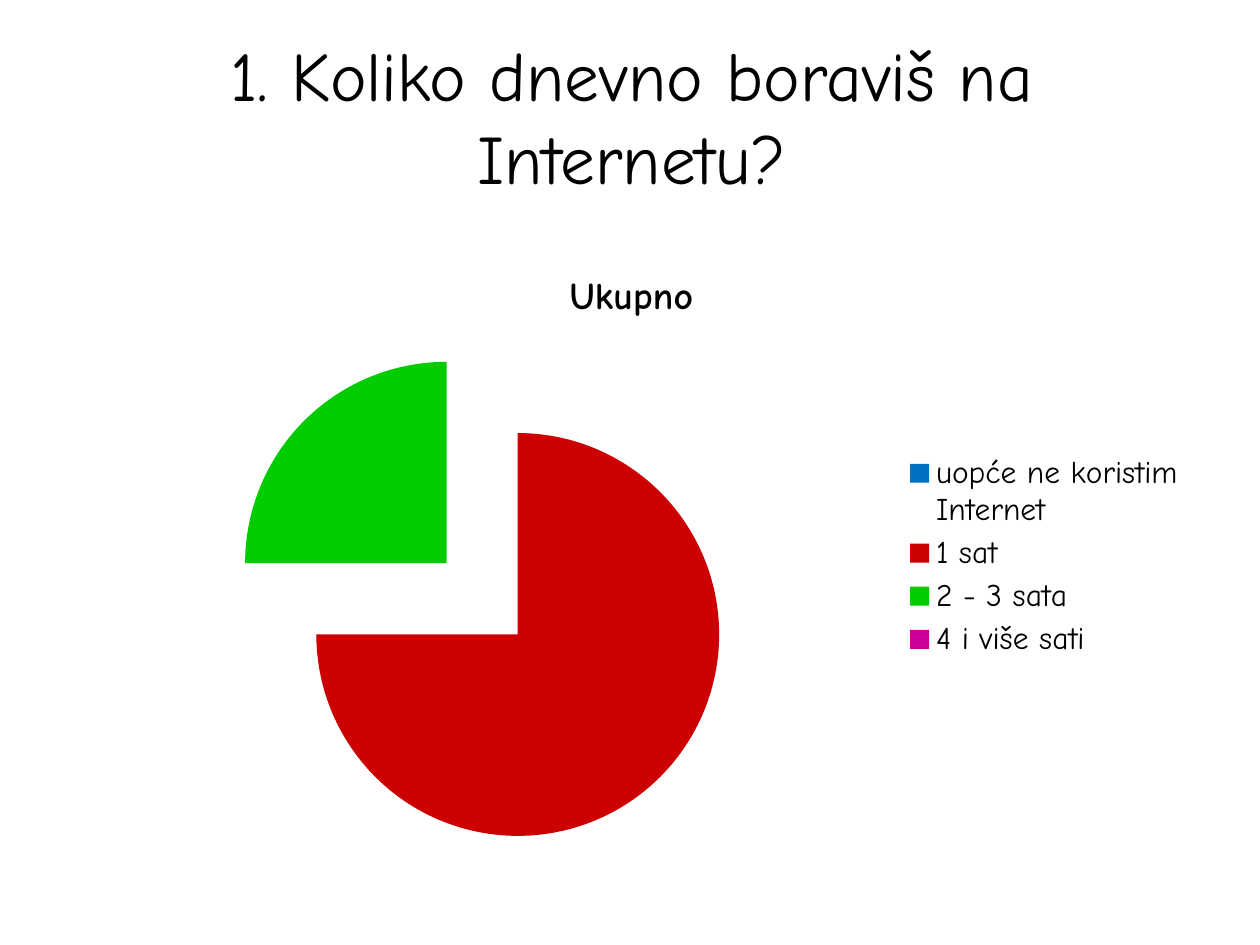
from lxml import etree
from pptx import Presentation
from pptx.chart.data import CategoryChartData
from pptx.dml.color import RGBColor
from pptx.enum import chart as charts, text
from pptx.oxml import ns
from pptx.util import Cm, Pt

COLOURS = {
    "text": "000000",
    "none": "0070C0",
    "one_hour": "CC0000",
    "two_hours": "00CC00",
    "four_hours": "CC0099",
}
ANSWERS = [
    ("uopće ne koristim Internet", 0, "none"),
    ("1 sat", 75, "one_hour"),
    ("2 - 3 sata", 25, "two_hours"),
    ("4 i više sati", 0, "four_hours"),
]


class SurveyPage:
    font_name = "Comic Neue"

    def __init__(self, deck):
        self.page = deck.slides.add_slide(deck.slide_layouts[6])

    def style(self, font, size, bold=False):
        font.name = self.font_name
        font.size = Pt(size)
        font.bold = bold
        font.color.rgb = RGBColor.from_string(COLOURS["text"])

    def heading(self, wording, left, top, width, height):
        box = self.page.shapes.add_textbox(Cm(left), Cm(top), Cm(width), Cm(height))
        frame = box.text_frame
        frame.word_wrap = True
        frame.vertical_anchor = text.MSO_ANCHOR.MIDDLE
        frame.text = wording
        para = frame.paragraphs[0]
        para.alignment = text.PP_ALIGN.CENTER
        self.style(para.runs[0].font, 39.6)

    def pie(self, title, answers, explosion, left, top, width, height):
        data = CategoryChartData()
        data.categories = [label for label, _, _ in answers]
        data.add_series(title, [share for _, share, _ in answers])
        chart = self.page.shapes.add_chart(
            charts.XL_CHART_TYPE.PIE, Cm(left), Cm(top), Cm(width), Cm(height), data
        ).chart
        self.style(chart.font, 18)
        chart.has_title = True
        chart.chart_title.text_frame.text = title
        span = chart.chart_title.text_frame.paragraphs[0].runs[0]
        self.style(span.font, 21.6, bold=True)
        chart.has_legend = True
        chart.legend.position = charts.XL_LEGEND_POSITION.RIGHT
        chart.legend.include_in_layout = False
        self.style(chart.legend.font, 18)

        plot = chart.plots[0]
        plot.vary_by_categories = True
        series = plot.series[0]
        for index, (_, _, colour) in enumerate(answers):
            fill = series.points[index].format.fill
            fill.solid()
            fill.fore_color.rgb = RGBColor.from_string(COLOURS[colour])
        offset = etree.Element(ns.qn("c:explosion"), val=str(explosion))
        series._element.find(ns.qn("c:dPt")).addprevious(offset)


def main():
    deck = Presentation()
    deck.slide_width, deck.slide_height = Cm(25.4), Cm(19.05)
    survey = SurveyPage(deck)
    survey.heading("1. Koliko dnevno boraviš na Internetu?", 1.3, 0.74, 22.86, 3.18)
    survey.pie("Ukupno", ANSWERS, 25, 1.3, 4.93, 22.86, 12.57)
    deck.save("out.pptx")


if __name__ == "__main__":
    main()
